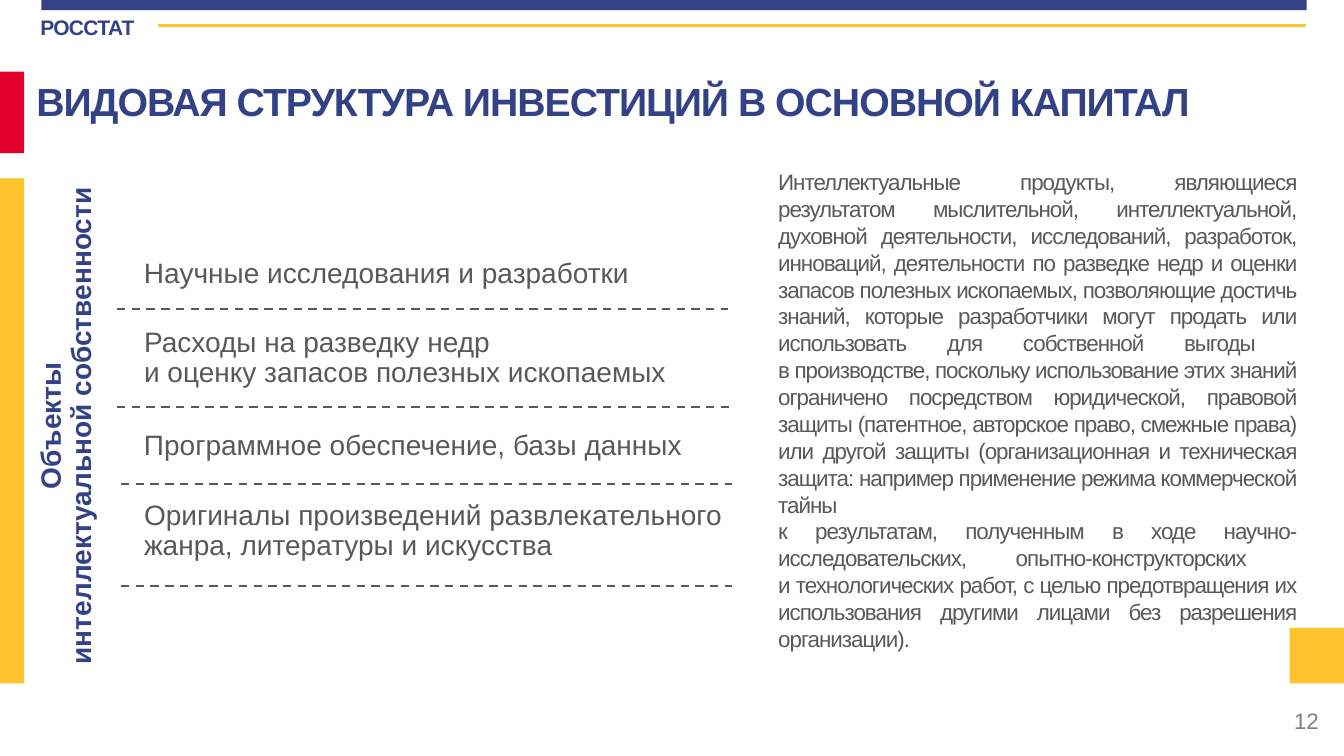
from copy import deepcopy

from lxml import etree
from pptx import Presentation
from pptx.dml.color import RGBColor
from pptx.enum.dml import MSO_LINE
from pptx.enum.shapes import MSO_CONNECTOR as Connector, MSO_SHAPE as Shape
from pptx.enum.text import MSO_ANCHOR as Anchor, MSO_AUTO_SIZE as AutoSize, PP_ALIGN as Align
from pptx.oxml.ns import qn
from pptx.util import Inches, Pt

COLORS = {
    "blue": "334286",
    "red": "E1002B",
    "yellow": "FFC32E",
    "text": "595959",
    "number": "808080",
}
FONT = "Arial"


def color(name):
    return RGBColor.from_string(COLORS[name])


def write(frame, text, size=20, ink="text", bold=False, align=Align.LEFT,
          line=1.0, tracking=0, anchor=Anchor.TOP, wrap=True, margins=None):
    """Fill a text frame: \\n starts a paragraph, \\v breaks a line."""
    frame.text = text
    frame.auto_size = AutoSize.NONE
    frame.word_wrap = wrap
    frame.vertical_anchor = anchor
    left, top, right, bottom = margins or (0.1, 0.05, 0.1, 0.05)
    frame.margin_left, frame.margin_top = Inches(left), Inches(top)
    frame.margin_right, frame.margin_bottom = Inches(right), Inches(bottom)
    for paragraph in frame.paragraphs:
        paragraph.alignment = align
        paragraph.line_spacing = line
        paragraph.space_before = Pt(0)
        for run in paragraph.runs:
            run.font.name = FONT
            run.font.size = Pt(size)
            run.font.bold = bold
            run.font.color.rgb = color(ink)
            if tracking:
                run.font._element.set("spc", str(round(tracking * 100)))
        # Line breaks take the format of the text around them
        for line_break in paragraph._p.findall(qn("a:br")):
            line_break.insert(0, deepcopy(paragraph.runs[0].font._element))


class SlideBuilder:
    def __init__(self, slide):
        self.slide = slide
        self.shapes = slide.shapes

    def title(self, text, left, top, width, height, **style):
        heading = self.shapes.title
        heading.left, heading.top = Inches(left), Inches(top)
        heading.width, heading.height = Inches(width), Inches(height)
        write(heading.text_frame, text, **style)

    def text(self, text, left, top, width, height, rotation=0, **style):
        box = self.shapes.add_textbox(
            Inches(left), Inches(top), Inches(width), Inches(height))
        box.rotation = rotation
        write(box.text_frame, text, **style)

    def block(self, fill, left, top, width, height):
        block = self.shapes.add_shape(
            Shape.RECTANGLE, Inches(left), Inches(top), Inches(width), Inches(height))
        block.shadow.inherit = False
        block.fill.solid()
        block.fill.fore_color.rgb = color(fill)
        block.line.fill.background()

    def rule(self, ink, left, right, y, weight, dashed=False):
        rule = self.shapes.add_connector(
            Connector.STRAIGHT, Inches(left), Inches(y), Inches(right), Inches(y))
        rule.line.color.rgb = color(ink)
        rule.line.width = Pt(weight)
        if dashed:
            rule.line.dash_style = MSO_LINE.DASH
        etree.SubElement(rule._element.spPr, qn("a:effectLst"))


def main():
    deck = Presentation()
    deck.slide_width, deck.slide_height = Inches(13.33), Inches(7.5)
    page = SlideBuilder(deck.slides.add_slide(deck.slide_layouts[5]))

    # Header and side bars
    page.text("РОССТАТ", 0.39, 0.13, 1.15, 0.32, size=15, ink="blue", bold=True,
              tracking=-0.5, margins=(0.01, 0.01, 0, 0))
    page.block("blue", 0.41, 0, 12.55, 0.1)
    page.block("red", 0, 0.71, 0.24, 0.81)
    page.block("yellow", 0, 1.77, 0.24, 5.01)
    page.rule("yellow", 1.57, 12.95, 0.25, 2)

    # Title and vertical label
    page.title("ВИДОВАЯ СТРУКТУРА ИНВЕСТИЦИЙ В ОСНОВНОЙ КАПИТАЛ",
               0.26, 0.77, 14.54, 0.55, size=28, ink="blue", bold=True,
               line=0.9, tracking=-0.7)
    page.text("Объекты\nинтеллектуальной собственности", -1.85, 3.87, 5.04, 0.71,
              rotation=270, ink="blue", bold=True, align=Align.CENTER,
              line=0.9, wrap=False)

    # Kinds of intellectual property: text, top, width, height, line spacing
    kinds = [
        ("Научные исследования и разработки", 2.49, 6.14, 0.44, 1.0),
        ("Расходы на разведку недр\nи оценку запасов полезных ископаемых",
         3.21, 10.35, 0.71, 0.9),
        ("Программное обеспечение, базы данных", 4.19, 6.14, 0.44, 1.0),
        ("Оригиналы произведений развлекательного жанра, литературы и искусства",
         4.92, 6.69, 0.71, 0.9),
    ]
    for kind, top, width, height, spacing in kinds:
        page.text(kind, 1.33, top, width, height, line=spacing)

    # Dashed separators
    for left, right, y in [(1.16, 7.22, 3.07), (1.16, 7.26, 4.04),
                           (1.2, 7.26, 4.8), (1.2, 7.26, 5.81)]:
        page.rule("text", left, right, y, 1.5, dashed=True)

    # Definition
    definition = (
        "Интеллектуальные продукты, являющиеся результатом мыслительной, "
        "интеллектуальной, духовной деятельности, исследований, разработок, "
        "инноваций, деятельности по разведке недр и оценки запасов полезных "
        "ископаемых, позволяющие достичь знаний, которые разработчики могут "
        "продать или использовать для собственной выгоды \v"
        "в производстве, поскольку использование этих знаний ограничено "
        "посредством юридической, правовой защиты (патентное, авторское право, "
        "смежные права) или другой защиты (организационная и техническая защита: "
        "например применение режима коммерческой тайны \v"
        "к результатам, полученным в ходе научно-исследовательских, "
        "опытно-конструкторских \v"
        "и технологических работ, с целью предотвращения их использования "
        "другими лицами без разрешения организации)."
    )
    page.text(definition, 7.62, 1.62, 5.34, 4.95, size=16,
              align=Align.JUSTIFY, tracking=-0.7)

    # Page number and corner block
    page.text("12", 10.18, 6.95, 3, 0.4, size=16, ink="number",
              align=Align.RIGHT, anchor=Anchor.MIDDLE)
    page.block("yellow", 12.79, 6.23, 0.54, 0.55)

    deck.save("out.pptx")


if __name__ == "__main__":
    main()
